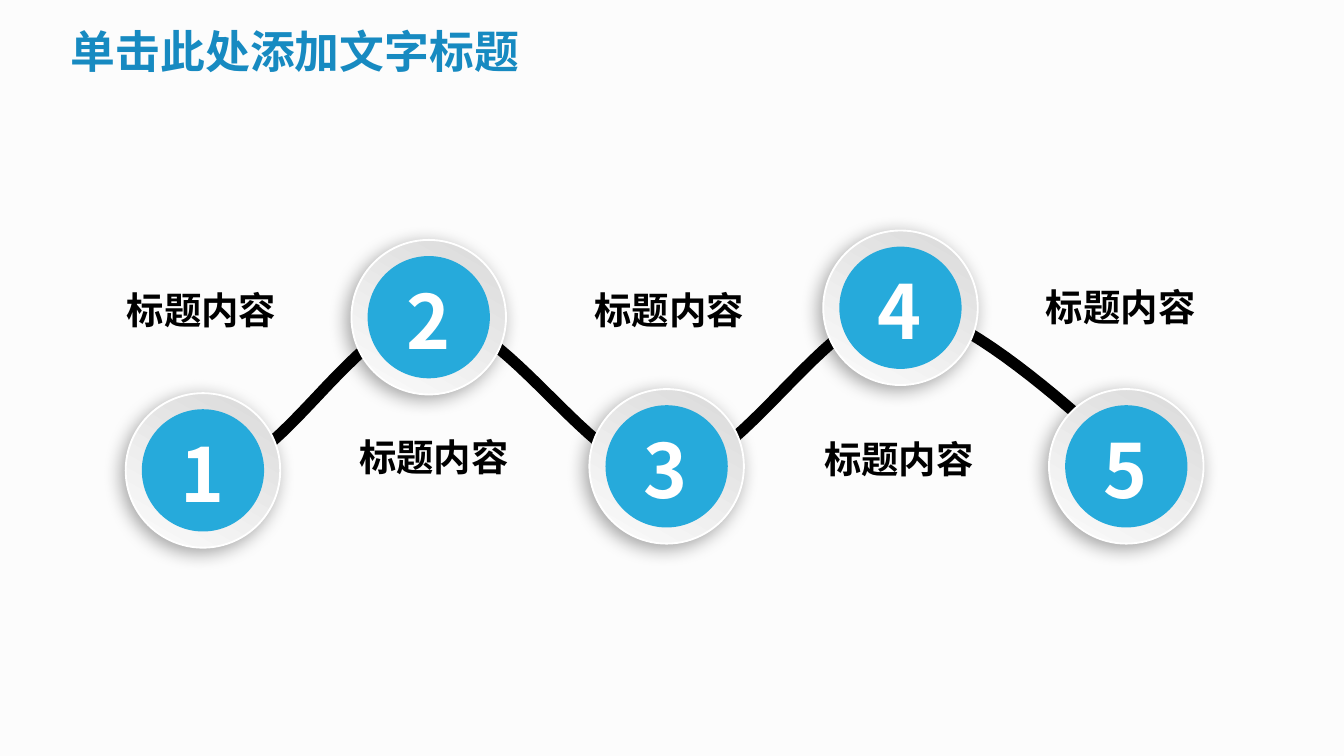
from lxml import etree
from pptx import Presentation
from pptx.dml.color import RGBColor
from pptx.enum.shapes import MSO_SHAPE
from pptx.enum.text import MSO_ANCHOR, PP_ALIGN
from pptx.oxml import parse_xml
from pptx.oxml.ns import nsdecls, qn
from pptx.util import Inches, Pt

FONT = "Noto Sans CJK SC"
BACKGROUND = RGBColor(0xFC, 0xFC, 0xFC)
TITLE_BLUE = RGBColor(0x17, 0x8A, 0xC1)
DISC_BLUE = RGBColor(0x26, 0xAA, 0xDB)
GREY = RGBColor(0xD9, 0xD9, 0xD9)
WHITE = RGBColor(0xFF, 0xFF, 0xFF)
BLACK = RGBColor(0, 0, 0)
RING, DISC = 1.15, 0.91


def add_text(shapes, text, x, y, w, h, size, color, align, wrap=False):
    tf = shapes.add_textbox(Inches(x), Inches(y), Inches(w), Inches(h)).text_frame
    tf.word_wrap = wrap
    tf.vertical_anchor = MSO_ANCHOR.MIDDLE
    p = tf.paragraphs[0]
    p.alignment = align
    r = p.add_run()
    r.text = text
    r.font.size = Pt(size)
    r.font.bold = True
    r.font.color.rgb = color
    r.font.name = FONT
    etree.SubElement(r.font._element, qn("a:ea")).set("typeface", FONT)


def add_circle(shapes, cx, cy, d):
    sp = shapes.add_shape(MSO_SHAPE.OVAL, Inches(cx - d / 2), Inches(cy - d / 2), Inches(d), Inches(d))
    sp.shadow.inherit = False
    return sp


prs = Presentation()
prs.slide_width, prs.slide_height = Inches(10), Inches(10) * 9 // 16
s = prs.slides.add_slide(prs.slide_layouts[6])
s.background.fill.solid()
s.background.fill.fore_color.rgb = BACKGROUND

add_text(s.shapes, "单击此处添加文字标题", 0.43, 0.13, 3.57, 0.5, 24, TITLE_BLUE, PP_ALIGN.LEFT)

start = (1.56, 3.52)
curves = [
    ((2.08, 3.53), (2.65, 2.35), (3.21, 2.35)),
    ((3.77, 2.36), (4.4, 3.52), (4.94, 3.53)),
    ((5.51, 3.51), (6.14, 2.3), (6.7, 2.29)),
    ((7.24, 2.28), (8.41, 3.46), (8.41, 3.44)),
]
STEPS = 24
points = []
a = start
for b, c, d in curves:
    for i in range(1, STEPS + 1):
        t = i / STEPS
        u = 1 - t
        points.append([
            Inches(u**3 * a[k] + 3 * u * u * t * b[k] + 3 * u * t * t * c[k] + t**3 * d[k])
            for k in (0, 1)
        ])
    a = d
builder = s.shapes.build_freeform(Inches(start[0]), Inches(start[1]))
builder.add_line_segments(points, close=False)
wave = builder.convert_to_shape()
wave.shadow.inherit = False
wave.fill.background()
wave.line.color.rgb = BLACK
wave.line.width = Pt(6)

centers = [(1.51, 3.5), (3.19, 2.36), (4.96, 3.47), (6.7, 2.29), (8.38, 3.47)]
for number, (cx, cy) in reversed(list(enumerate(centers, 1))):
    shapes = s.shapes.add_group_shape().shapes
    ring = add_circle(shapes, cx, cy, RING)
    ring.fill.gradient()
    ring.fill.gradient_angle = 240
    for stop, color in zip(ring.fill.gradient_stops, (GREY, BACKGROUND)):
        stop.color.rgb = color
    ring.line.color.rgb = WHITE
    ring.line.width = Pt(1)
    ring._element.spPr.find(qn("a:effectLst")).append(parse_xml(
        f'<a:outerShdw {nsdecls("a")} blurRad="{Pt(10)}" dist="{Pt(3)}" dir="{136 * 60000}" '
        'algn="ctr" rotWithShape="0"><a:srgbClr val="000000"><a:alpha val="34000"/>'
        '</a:srgbClr></a:outerShdw>'))
    disc = add_circle(shapes, cx, cy, DISC)
    disc.fill.solid()
    disc.fill.fore_color.rgb = DISC_BLUE
    disc.line.fill.background()
    add_text(shapes, str(number), cx - 0.28, cy - 0.37, 0.55, 0.77, 40, WHITE, PP_ALIGN.CENTER)

for x, y in [(0.52, 2.08), (2.25, 3.18), (4, 2.08), (5.71, 3.19), (7.36, 2.06)]:
    add_text(s.shapes, "标题内容", x, y, 1.96, 0.44, 20, BLACK, PP_ALIGN.CENTER, True)

prs.save("out.pptx")
